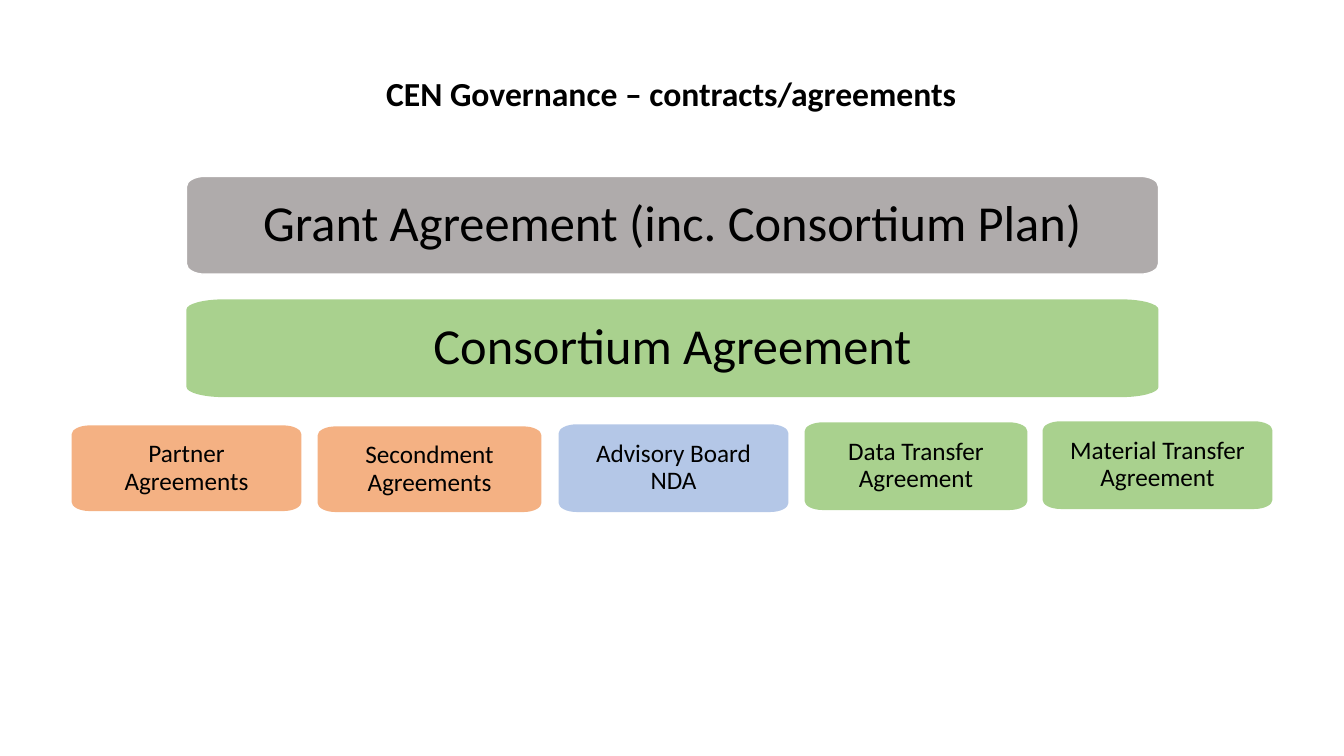
from lxml.etree import SubElement
from pptx import Presentation
from pptx.dml.color import RGBColor
from pptx.enum.text import MSO_ANCHOR, MSO_AUTO_SIZE, PP_ALIGN
from pptx.oxml.ns import qn
from pptx.util import Inches, Pt

COLOURS = {
    "text": "000000",
    "outline": "FFFFFF",
    "grant": "AFABAB",
    "consortium": "A9D18E",
    "people": "F4B183",
    "board": "B4C7E7",
}
ARC = 0.55  # control point distance that makes a cubic curve a quarter ellipse


def corner_points(left, top, width, height, corner_x, corner_y):
    """Ends of the four corners, clockwise from the left edge."""
    right, bottom = left + width, top + height
    points = [
        (left, top + corner_y), (left + corner_x, top),
        (right - corner_x, top), (right, top + corner_y),
        (right, bottom - corner_y), (right - corner_x, bottom),
        (left + corner_x, bottom), (left, bottom - corner_y),
    ]
    return [(Inches(x), Inches(y)) for x, y in points]


def round_corners(box):
    """Turn every second segment, from the first one, into a curve."""
    outline = next(box._element.iter(qn("a:path")))
    points = [(int(point.get("x")), int(point.get("y")))
              for point in outline.iter(qn("a:pt"))]
    segments = outline.findall(qn("a:lnTo"))
    for index in range(0, 8, 2):
        start, end = points[index], points[index + 1]
        leaves_upright = index % 4 == 0
        corner = (start[0], end[1]) if leaves_upright else (end[0], start[1])
        segment = segments[index]
        segment.clear()
        segment.tag = qn("a:cubicBezTo")
        controls = [[round(a + ARC * (b - a)) for a, b in zip(point, corner)]
                    for point in (start, end)]
        for x, y in (*controls, end):
            SubElement(segment, qn("a:pt"), x=str(x), y=str(y))


class AgreementSlide:
    """Holds the text style and the slide being filled."""

    font_name = "Calibri"

    def __init__(self, deck):
        self.page = deck.slides.add_slide(deck.slide_layouts[5])

    def colour(self, name):
        return RGBColor.from_string(COLOURS[name])

    def style(self, paragraph, size, bold=False):
        for span in paragraph.runs:
            span.font.name = self.font_name
            span.font.size = Pt(size)
            span.font.bold = bold
            span.font.color.rgb = self.colour("text")

    def title(self, text, left, top, width, height):
        box = self.page.shapes.title
        box.left, box.top = Inches(left), Inches(top)
        box.width, box.height = Inches(width), Inches(height)
        frame = box.text_frame
        frame.text = text
        frame.auto_size = MSO_AUTO_SIZE.NONE
        frame.vertical_anchor = MSO_ANCHOR.TOP
        frame.paragraphs[0].alignment = PP_ALIGN.LEFT
        self.style(frame.paragraphs[0], 24, bold=True)

    def panel(self, text, place, corner, fill, size, inset, outlined=False):
        points = corner_points(*place, *corner)
        builder = self.page.shapes.build_freeform(*points[0])
        builder.add_line_segments(points[1:], close=True)
        box = builder.convert_to_shape()
        round_corners(box)
        box.shadow.inherit = False
        box.fill.solid()
        box.fill.fore_color.rgb = self.colour(fill)
        if outlined:
            box.line.color.rgb = self.colour("outline")
            box.line.width = Pt(1)
        else:
            box.line.fill.background()

        frame = box.text_frame
        frame.text = text
        frame.word_wrap = True
        frame.vertical_anchor = MSO_ANCHOR.MIDDLE
        frame.margin_left = frame.margin_right = Inches(inset)
        frame.margin_top = frame.margin_bottom = Inches(inset)
        paragraph = frame.paragraphs[0]
        paragraph.alignment = PP_ALIGN.CENTER
        paragraph.line_spacing = 0.9
        self.style(paragraph, size)


def main():
    deck = Presentation()
    deck.slide_width, deck.slide_height = Inches(13.33), Inches(7.5)
    slide = AgreementSlide(deck)

    # Title
    slide.title("CEN Governance – contracts/agreements", 3.73, 0.67, 5.87, 0.5)

    # Overarching agreements
    slide.panel("Grant Agreement (inc. Consortium Plan)", (1.85, 1.75, 9.64, 0.97),
                (0.18, 0.1), "grant", 36, 0.19, outlined=True)
    slide.panel("Consortium Agreement", (1.85, 2.97, 9.64, 0.97),
                (0.37, 0.1), "consortium", 36, 0.12)

    # Supporting agreements, left to right
    supporting = [
        ("Partner Agreements", (0.71, 4.22, 2.28, 0.85), "people"),
        ("Secondment Agreements", (3.15, 4.23, 2.22, 0.85), "people"),
        ("Advisory Board NDA", (5.54, 4.21, 2.28, 0.87), "board"),
        ("Data Transfer Agreement", (7.98, 4.19, 2.21, 0.87), "consortium"),
        ("Material Transfer Agreement", (10.34, 4.18, 2.28, 0.87), "consortium"),
    ]
    for text, place, fill in supporting:
        slide.panel(text, place, (0.18, 0.09), fill, 18, 0.14)

    deck.save("out.pptx")


if __name__ == "__main__":
    main()
